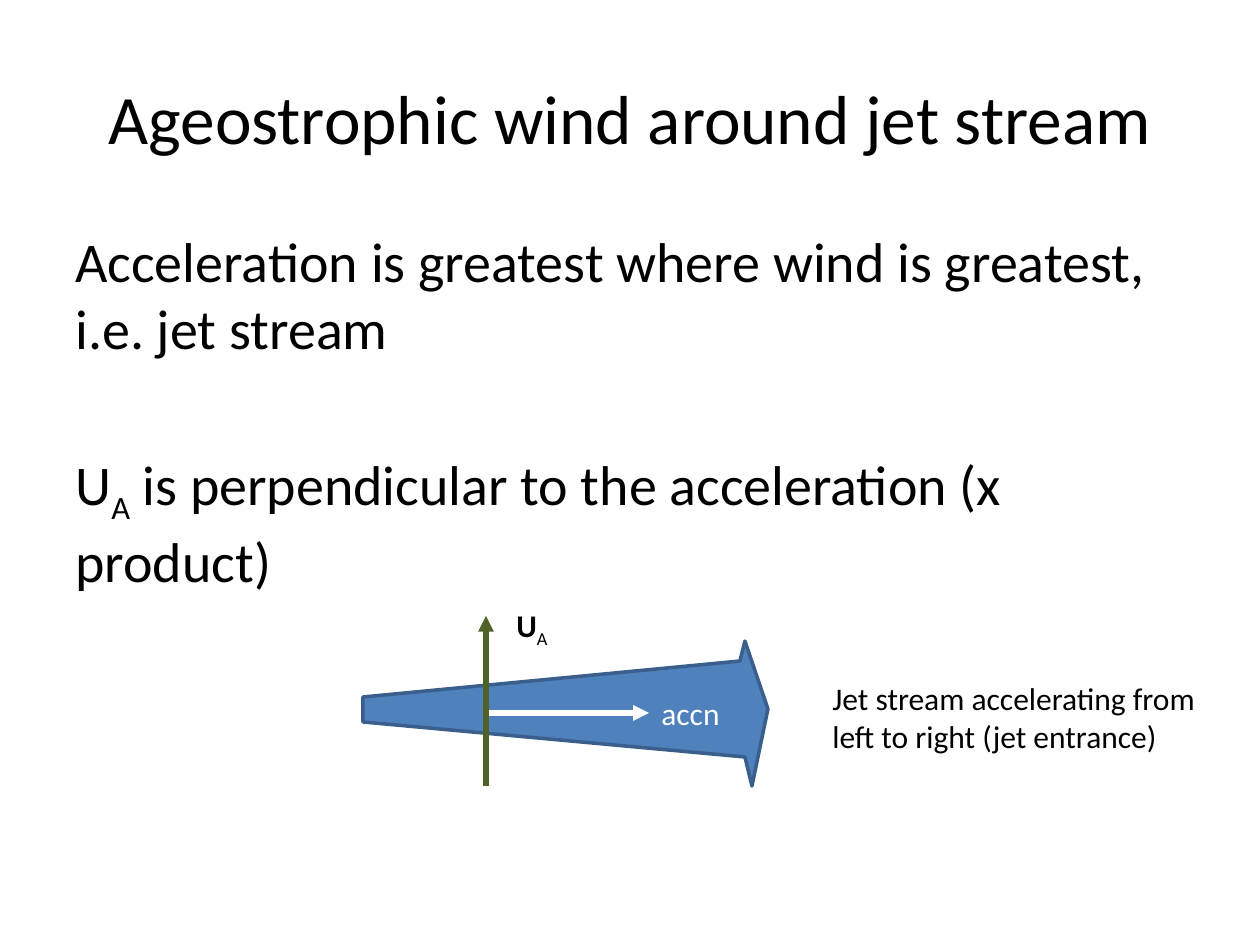
from lxml import etree
from pptx import Presentation
from pptx import util as u
from pptx.dml.color import RGBColor
from pptx.enum import shapes, text
from pptx.oxml import ns

PX = 914400 / 126
BLACK = RGBColor(0x00, 0x00, 0x00)
WHITE = RGBColor(0xFF, 0xFF, 0xFF)
BLUE = RGBColor(0x4F, 0x81, 0xBD)
NAVY = RGBColor(0x3A, 0x5F, 0x8C)
GREEN = RGBColor(0x4F, 0x62, 0x28)
JET = [(363, 697), (740, 661), (745, 641), (768, 709),
       (752, 786), (745, 757), (363, 722)]


def px(n):
    """Turn whole pixels into EMU."""
    return u.Emu(round(n * PX))


def add_run(para, words, size, color=BLACK, bold=False, sub=False):
    """Add one run, lowered when it is a subscript."""
    run = para.add_run()
    run.text = words
    font = run.font
    font.name, font.size, font.bold = "Calibri", u.Pt(size), bold
    font.color.rgb = color
    if sub:
        run._r.get_or_add_rPr().set("baseline", "-25000")


def add_box(slide, left, top, width, height, grow=False):
    """Add a wrapping text box."""
    box = slide.shapes.add_textbox(px(left), px(top), px(width), px(height))
    frame = box.text_frame
    frame.word_wrap = True
    if grow:
        frame.auto_size = text.MSO_AUTO_SIZE.SHAPE_TO_FIT_TEXT
    return box


def add_title(slide, words):
    """Add the centred slide title."""
    frame = add_box(slide, 63, 38, 1134, 157).text_frame
    frame.vertical_anchor = text.MSO_ANCHOR.MIDDLE
    para = frame.paragraphs[0]
    para.alignment = text.PP_ALIGN.CENTER
    add_run(para, words, 39.6)


def add_body(slide):
    """Add the two statements about acceleration."""
    frame = add_box(slide, 63, 220, 1134, 624).text_frame
    first = frame.paragraphs[0]
    first.space_before = u.Pt(6.4)
    add_run(first, "Acceleration is greatest where wind is greatest, "
                   "i.e. jet stream", 32)
    last = frame.add_paragraph()
    last.space_before = u.Pt(51)
    add_run(last, "U", 32)
    add_run(last, "A", 32, sub=True)
    add_run(last, " is perpendicular to the acceleration (x product)", 32)


def add_jet(slide):
    """Draw the widening jet stream arrow."""
    form = slide.shapes.build_freeform(*JET[0], scale=PX)
    form.add_line_segments(JET[1:], close=True)
    jet = form.convert_to_shape()
    jet.shadow.inherit = False
    jet.fill.solid()
    jet.fill.fore_color.rgb = BLUE
    jet.line.color.rgb = NAVY
    jet.line.width = u.Pt(2)


def add_arrow(slide, start, end, color):
    """Draw a straight arrow from start to end."""
    arrow = slide.shapes.add_connector(
        shapes.MSO_CONNECTOR.STRAIGHT, *map(px, start + end))
    arrow.line.color.rgb = color
    arrow.line.width = u.Pt(3)
    etree.SubElement(arrow.line._get_or_add_ln(), ns.qn("a:tailEnd"),
                     type="triangle")
    etree.SubElement(arrow._element.spPr, ns.qn("a:effectLst"))
    return arrow


def add_label(slide, left, top, width, height, words, color=BLACK):
    """Add a small diagram label."""
    box = add_box(slide, left, top, width, height, grow=True)
    add_run(box.text_frame.paragraphs[0], words, 18, color)
    return box


def add_wind(slide):
    """Label the ageostrophic wind arrow."""
    para = add_box(slide, 504, 600, 60, 50, grow=True).text_frame.paragraphs[0]
    add_run(para, "U", 18, bold=True)
    add_run(para, "A", 18, sub=True)


def main():
    """Build and save the slide."""
    deck = Presentation()
    deck.slide_width, deck.slide_height = px(1260), px(945)
    slide = deck.slides.add_slide(deck.slide_layouts[6])
    add_title(slide, "Ageostrophic wind around jet stream")
    add_body(slide)
    add_jet(slide)
    add_label(slide, 820, 673, 402, 89,
              "Jet stream accelerating from left to right (jet entrance)")
    accel = add_arrow(slide, (486, 713), (649, 713), WHITE)
    accel.end_connect(add_label(slide, 649, 688, 88, 50, "accn", WHITE), 1)
    add_arrow(slide, (486, 786), (486, 616), GREEN)
    add_wind(slide)
    deck.save("out.pptx")


if __name__ == "__main__":
    main()
